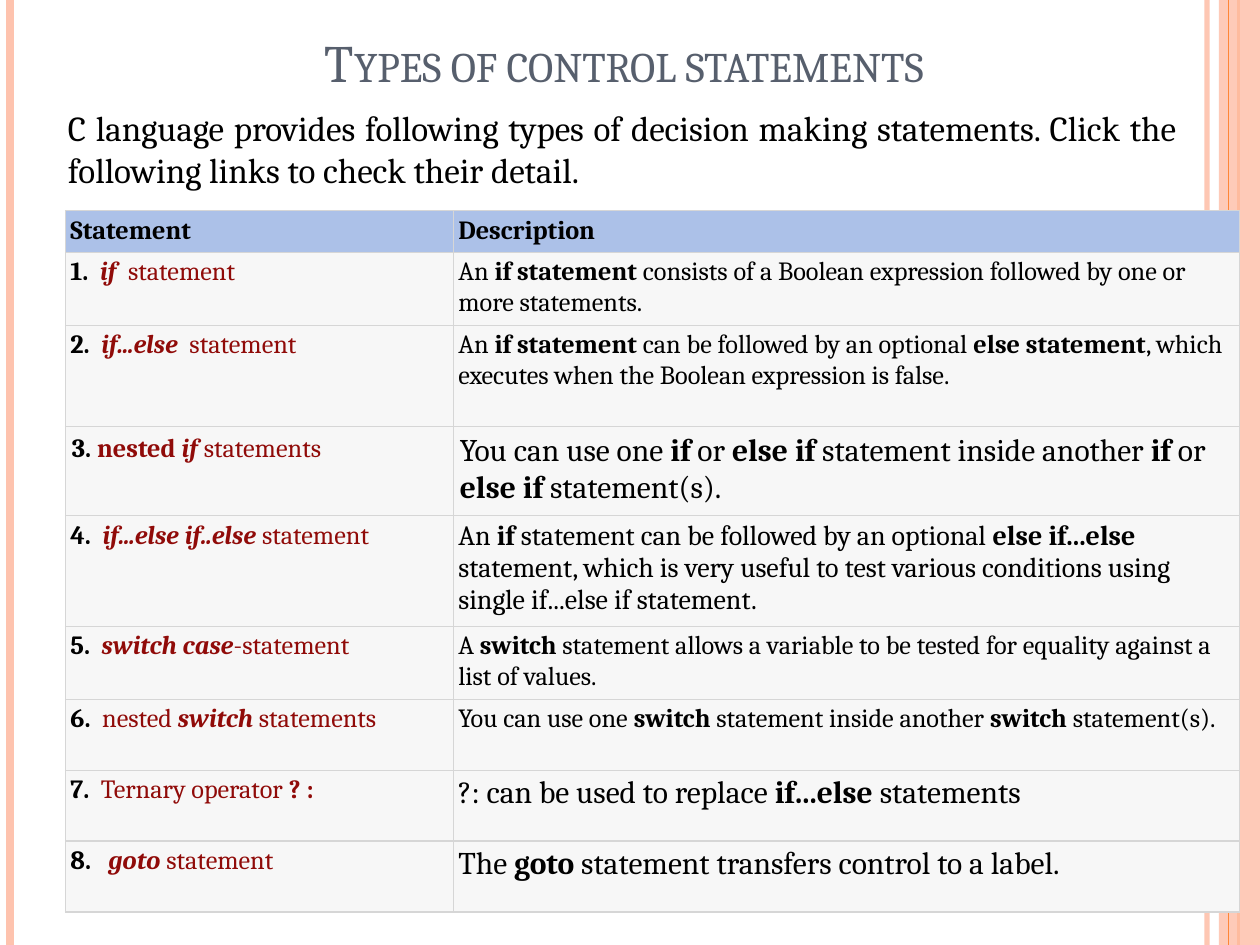
"""Build the slide on the control statements of C."""
from lxml import etree
from pptx import Presentation
from pptx.dml.color import RGBColor
from pptx.enum.shapes import MSO_CONNECTOR, MSO_SHAPE
from pptx.enum.text import MSO_ANCHOR, PP_ALIGN
from pptx.oxml.ns import qn
from pptx.util import Cm, Pt

LINE, RECT = MSO_CONNECTOR.STRAIGHT, MSO_SHAPE.RECTANGLE
BOTTOM = MSO_ANCHOR.BOTTOM
CENTER, JUSTIFY = PP_ALIGN.CENTER, PP_ALIGN.JUSTIFY

FONT = "Cambria"
WIDE, HIGH = 25.4, 19.05
BLACK, RED, SLATE = "000000", "900B09", "575F6D"
PEACH, ORANGE = "FEC3AE", "FE8637"
HEAD, BODY, EDGE = "ACC1E8", "F7F7F7", "D6D6D6"

TITLE = "Types of control statements"
INTRO = ("C language provides following types of decision making statements. "
         "Click the following links to check their detail.")

# Run styles: b bold, i italic, r red
ROWS = [
    (0.83, 0.1, 15, [("Statement", "b")], [("Description", "b")]),
    (1.45, 0.1, 15,
     [("1.  ", "b"), ("if  ", "bir"), ("statement", "r")],
     [("An ", ""), ("if statement", "b"),
      (" consists of a Boolean expression followed by one or more statements.", "")]),
    (2.05, 0.1, 15,
     [("2.  ", "b"), ("if...else  ", "bir"), ("statement", "r")],
     [("An ", ""), ("if statement", "b"),
      (" can be followed by an optional ", ""), ("else statement", "b"),
      (", which executes when the Boolean expression is false.", "")]),
    (1.73, 0.13, 18,
     [("3.", "b"), (" nested ", "br"), ("if ", "bir"), ("statements", "r")],
     [("You can use one ", ""), ("if", "b"), (" or ", ""), ("else if", "b"),
      (" statement inside another ", ""), ("if", "b"), (" or ", ""),
      ("else if", "b"), (" statement(s).", "")]),
    (2.15, 0.1, 16,
     [("4.  ", "b"), ("if...else if..else ", "bir"), ("statement", "r")],
     [("An ", ""), ("if", "b"),
      (" statement can be followed by an optional ", ""),
      ("else if...else", "b"),
      (" statement, which is very useful to test various conditions "
       "using single if...else if statement.", "")]),
    (1.45, 0.1, 15,
     [("5.  ", "b"), ("switch case", "bir"), ("-statement", "r")],
     [("A ", ""), ("switch", "b"),
      (" statement allows a variable to be tested for equality "
       "against a list of values.", "")]),
    (1.43, 0.1, 15,
     [("6.  ", "b"), ("nested ", "r"), ("switch", "bir"), (" statements", "r")],
     [("You can use one ", ""), ("switch", "b"),
      (" statement inside another ", ""), ("switch ", "b"),
      ("statement(s).", "")]),
    (1.43, 0.1, 18,
     [("7.  ", "b"), ("Ternary operator ", "r"), ("? :", "br")],
     [("?: can be used to replace ", ""), ("if...else ", "b"),
      ("statements", "")]),
    (1.43, 0.1, 18,
     [("8.   ", "b"), ("goto", "bir"), (" statement", "r")],
     [("The ", ""), ("goto", "b"),
      (" statement transfers control to a label.", "")]),
]
COLS = 7.82, 15.85


def rgb(code):
    return RGBColor.from_string(code)


def fade(fill, share):
    tint = fill._xPr.find(qn("a:solidFill"))[0]
    etree.SubElement(tint, qn("a:alpha")).set("val", str(share * 1000))


def stripe(slide, left, width, color, share=100):
    line = slide.shapes.add_connector(LINE, Cm(left), 0, Cm(left), Cm(HIGH))
    line.line.width = Pt(width)
    line.line.color.rgb = rgb(color)
    if share < 100:
        fade(line.line.fill, share)
    etree.SubElement(line._element.spPr, qn("a:effectLst"))


def band(slide, left, width, color, share):
    shape = slide.shapes.add_shape(RECT, Cm(left), 0, Cm(width), Cm(HIGH))
    shape.shadow.inherit = False
    shape.line.fill.background()
    shape.fill.solid()
    shape.fill.fore_color.rgb = rgb(color)
    fade(shape.fill, share)


def write(para, text, size, color, bold=False, slant=False):
    run = para.add_run()
    run.text = text
    font = run.font
    font.name, font.size = FONT, Pt(size)
    font.bold, font.italic = bold, slant
    font.color.rgb = rgb(color)
    return run


def label(slide, spot, text, size, color, align):
    box = slide.shapes.add_textbox(*map(Cm, spot))
    frame = box.text_frame
    frame.word_wrap = True
    para = frame.paragraphs[0]
    para.alignment = align
    return frame, write(para, text, size, color)


def border(cell):
    props = cell._tc.get_or_add_tcPr()
    for side in ("lnL", "lnR", "lnT", "lnB"):
        line = etree.SubElement(props, qn("a:" + side), w=str(Pt(0.75)))
        fill = etree.SubElement(line, qn("a:solidFill"))
        etree.SubElement(fill, qn("a:srgbClr"), val=EDGE)


def fill_cell(cell, runs, size, inset, color):
    border(cell)
    cell.fill.solid()
    cell.fill.fore_color.rgb = rgb(color)
    cell.margin_left = cell.margin_right = Cm(inset)
    cell.margin_top = cell.margin_bottom = Cm(inset)
    para = cell.text_frame.paragraphs[0]
    for text, style in runs:
        tone = RED if "r" in style else BLACK
        write(para, text, size, tone, "b" in style, "i" in style)


def add_grid(slide):
    high = sum(row[0] for row in ROWS)
    grid = slide.shapes.add_table(len(ROWS), len(COLS), Cm(1.32), Cm(4.25),
                                  Cm(sum(COLS)), Cm(high)).table
    for col, width in zip(grid.columns, COLS):
        col.width = Cm(width)
    for at, (tall, inset, size, name, note) in enumerate(ROWS):
        grid.rows[at].height = Cm(tall)
        color = BODY if at else HEAD
        fill_cell(grid.cell(at, 0), name, 15, inset, color)
        fill_cell(grid.cell(at, 1), note, size, inset, color)


def main():
    deck = Presentation()
    deck.slide_width, deck.slide_height = Cm(WIDE), Cm(HIGH)
    slide = deck.slides.add_slide(deck.slide_layouts[6])
    stripe(slide, 24.33, 3, PEACH, 93)
    stripe(slide, 0.21, 4.5, PEACH)
    stripe(slide, 24.97, 1.5, ORANGE)
    band(slide, 24.57, 0.83, PEACH, 87)
    stripe(slide, 24.77, 0.75, ORANGE)
    frame, run = label(slide, (2.21, 0.03, 20.75, 1.98), TITLE, 30, SLATE, CENTER)
    frame.vertical_anchor = BOTTOM
    run.font._element.set("cap", "small")
    add_grid(slide)
    label(slide, (1.12, 2.03, 22.86, 1.96), INTRO, 20, BLACK, JUSTIFY)
    deck.save("out.pptx")


if __name__ == "__main__":
    main()
